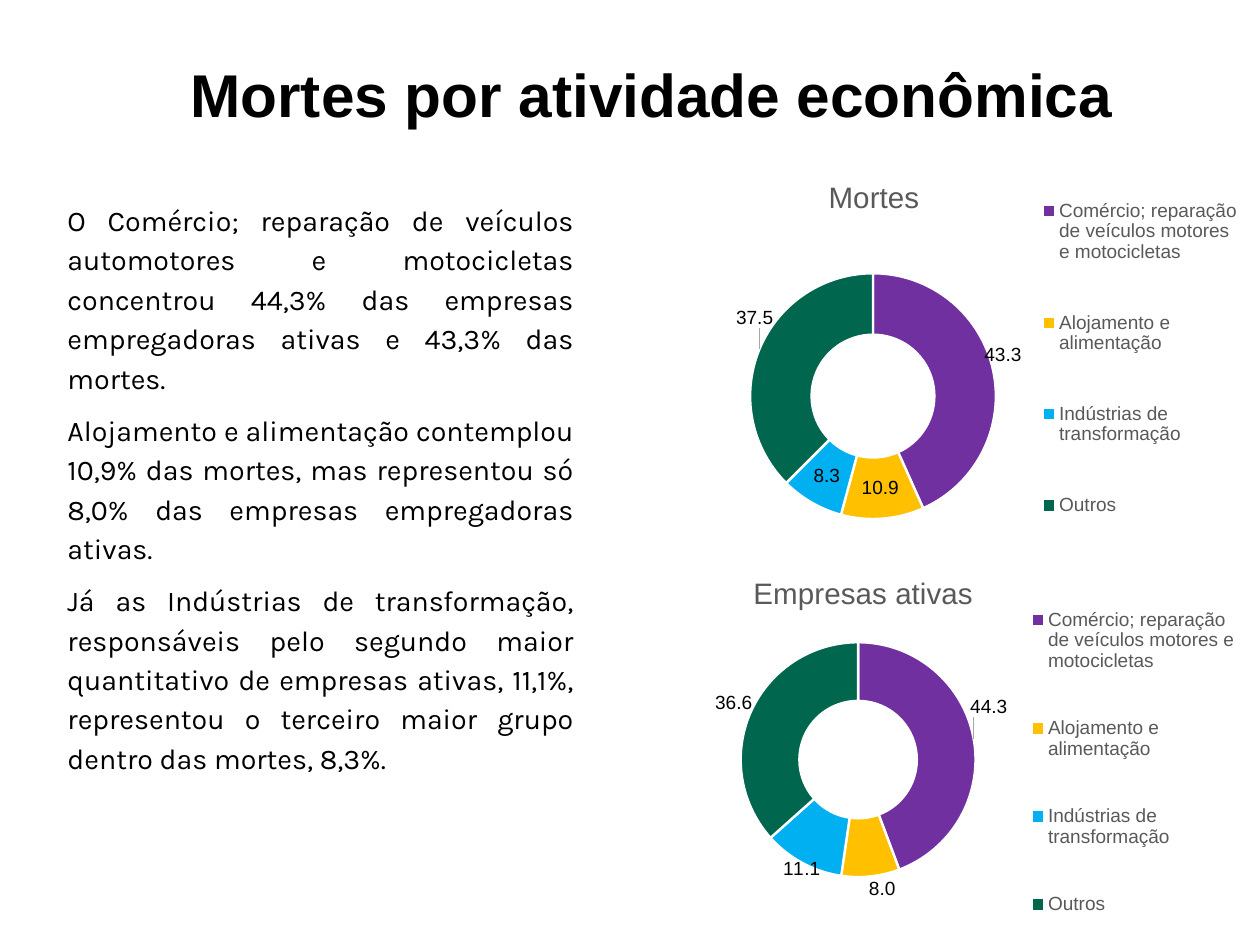
"""Build a slide on business deaths by economic activity, with two doughnut charts."""
from dataclasses import dataclass

from lxml.etree import SubElement as Sub, Element
from pptx import Presentation
from pptx.chart.data import CategoryChartData as Data
from pptx.dml.color import RGBColor
from pptx.enum.chart import XL_CHART_TYPE as Kind, XL_LEGEND_POSITION as Side
from pptx.enum.text import MSO_ANCHOR as Anchor, PP_ALIGN as Align
from pptx.oxml.ns import qn
from pptx.util import Cm, Pt

Box = tuple[float, float, float, float]
Spot = tuple[float, float]

BLACK, GREY, SILVER, WHITE = "000000", "595959", "A6A6A6", "FFFFFF"
SLICES = {
    "Comércio; reparação de veículos motores e motocicletas": "7030A0",
    "Alojamento e alimentação": "FFC000",
    "Indústrias de transformação": "00B0F0",
    "Outros": "00664D",
}
TITLE = "Mortes por atividade econômica"
BODY = [
    "O Comércio; reparação de veículos automotores e motocicletas concentrou "
    "44,3% das empresas empregadoras ativas e 43,3% das mortes.",
    "Alojamento e alimentação contemplou 10,9% das mortes, mas representou só "
    "8,0% das empresas empregadoras ativas.",
    "Já as Indústrias de transformação, responsáveis pelo segundo maior "
    "quantitativo de empresas ativas, 11,1%, representou o terceiro maior grupo "
    "dentro das mortes, 8,3%.",
]


@dataclass
class Ring:
    title: str
    box: Box
    vals: list[float]
    head: Spot
    plot: Box
    key: Box
    shifts: dict[int, Spot]


RINGS = [
    Ring("Mortes", (12.98, 3.1, 14.76, 12.01), [43.3, 10.9, 8.3, 37.5],
         (0.36, 0.06), (0.25, 0.21, 0.37, 0.53), (0.69, 0.02, 0.3, 0.77),
         {0: (0.06, -0.04), 3: (-0.05, -0.08)}),
    Ring("Empresas ativas", (12.22, 9.7, 16.31, 11.68), [44.3, 8.0, 11.1, 36.6],
         (0.27, 0.25), (0.26, 0.37, 0.32, 0.49), (0.65, 0.24, 0.29, 0.76),
         {0: (0.06, -0.07), 1: (0.02, 0.08), 2: (-0.02, 0.06), 3: (-0.06, -0.04)}),
]


def tint(code: str) -> RGBColor:
    return RGBColor.from_string(code)


def style(font, size: float, code: str, name: str = "Arial", bold: bool = False) -> None:
    font.size, font.name, font.bold = Pt(size), name, bold
    font.color.rgb = tint(code)


def write(slide, box: Box, lines: list[str], size: float, name: str, bold: bool,
          align: Align, space: float, after: float, anchor: Anchor) -> None:
    frame = slide.shapes.add_textbox(*map(Cm, box)).text_frame
    frame.word_wrap, frame.vertical_anchor = True, anchor
    frame.text = "\n".join(lines)
    for para in frame.paragraphs:
        para.alignment, para.line_spacing, para.space_after = align, space, Pt(after)
        for run in para.runs:
            style(run.font, size, BLACK, name, bold)


def place(node, index: int, spot: Box | Spot, edge: bool = True, inner: bool = False) -> None:
    for old in node.findall(qn("c:layout")):
        node.remove(old)
    layout = Element(qn("c:layout"))
    manual = Sub(layout, qn("c:manualLayout"))
    if inner:
        Sub(manual, qn("c:layoutTarget")).set("val", "inner")
    if edge:
        for tag in ("xMode", "yMode"):
            Sub(manual, qn(f"c:{tag}")).set("val", "edge")
    for tag, part in zip("xywh", spot):
        Sub(manual, qn(f"c:{tag}")).set("val", str(part))
    node.insert(index, layout)


def clear(chart) -> None:
    props = Element(qn("c:spPr"))
    Sub(props, qn("a:noFill"))
    Sub(Sub(props, qn("a:ln")), qn("a:noFill"))
    chart._chartSpace.find(qn("c:chart")).addnext(props)


def lead(node) -> None:
    for old in node.findall(qn("c:showLeaderLines")):
        node.remove(old)
    Sub(node, qn("c:showLeaderLines")).set("val", "1")
    props = Sub(Sub(node, qn("c:leaderLines")), qn("c:spPr"))
    fill = Sub(Sub(props, qn("a:ln"), w="9525"), qn("a:solidFill"))
    Sub(fill, qn("a:srgbClr")).set("val", SILVER)


def draw(slide, ring: Ring) -> None:
    data = Data(number_format="0.0")
    data.categories = list(SLICES)
    data.add_series("Series 1", ring.vals)
    chart = slide.shapes.add_chart(Kind.DOUGHNUT, *map(Cm, ring.box), data).chart
    style(chart.font, 10, BLACK)
    clear(chart)

    chart.has_title = True
    frame = chart.chart_title.text_frame
    frame.text = ring.title
    style(frame.paragraphs[0].runs[0].font, 18.6, GREY)
    root = chart._chartSpace.find(qn("c:chart"))
    place(root.find(qn("c:title")), 1, ring.head)

    chart.has_legend = True
    chart.legend.position = Side.BOTTOM
    chart.legend.include_in_layout = False
    style(chart.legend.font, 12, GREY)
    place(root.find(qn("c:legend")), 1, ring.key)

    area = root.find(qn("c:plotArea"))
    place(area, 0, ring.plot, inner=True)
    next(area.iter(qn("c:holeSize"))).set("val", "75")

    plot = chart.plots[0]
    plot.vary_by_categories = True
    series = plot.series[0]
    for index, code in enumerate(SLICES.values()):
        form = series.points[index].format
        form.fill.solid()
        form.fill.fore_color.rgb = tint(code)
        form.line.color.rgb = tint(WHITE)
        form.line.width = Pt(1.5)

    labels = series.data_labels
    labels.show_value = True
    labels.number_format, labels.number_format_is_linked = "0.0", False
    style(labels.font, 12, BLACK)
    for index in ring.shifts:
        style(series.points[index].data_label.font, 12, BLACK)
    for node in area.iter(qn("c:dLbl")):
        index = int(node.find(qn("c:idx")).get("val"))
        place(node, 1, ring.shifts[index], edge=False)
    lead(next(area.iter(qn("c:dLbls"))))


def main() -> None:
    deck = Presentation()
    deck.slide_width, deck.slide_height = Cm(28), Cm(21)
    slide = deck.slides.add_slide(deck.slide_layouts[6])
    write(slide, (2.38, 0.51, 24.21, 3.33), [TITLE], 38, "Arial", True,
          Align.CENTER, 0.9, 0, Anchor.MIDDLE)
    write(slide, (1.25, 4.27, 11.75, 12.29), BODY, 18, "Karla", False,
          Align.JUSTIFY, 1.15, 8, Anchor.TOP)
    for ring in RINGS:
        draw(slide, ring)
    deck.save("out.pptx")


if __name__ == "__main__":
    main()
